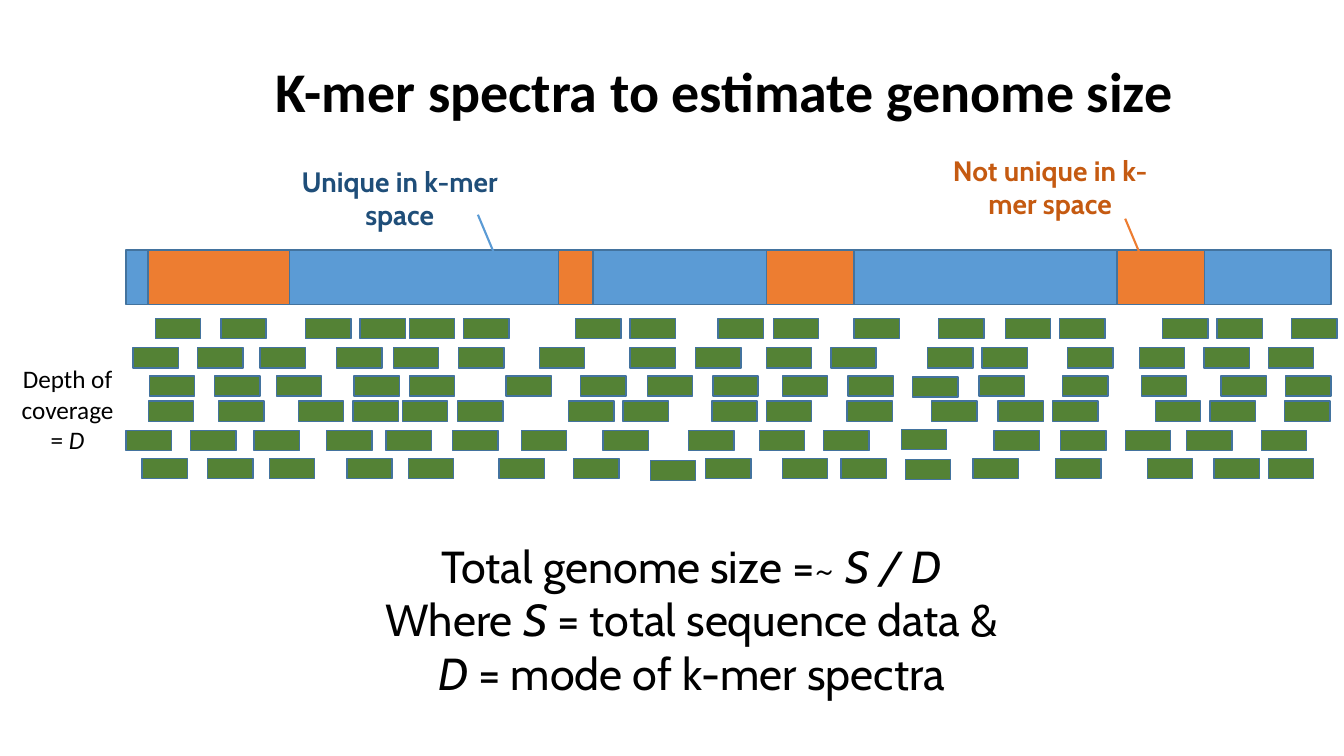
from lxml import etree
from pptx import Presentation
from pptx.dml.color import RGBColor
from pptx.enum import shapes, text
from pptx.oxml.ns import qn
from pptx.util import Inches, Pt

BLUE, ORANGE, GREEN = "5B9BD5", "ED7D31", "548235"
OUTLINE, BLACK = "43739E", "000000"
GENOME_TOP, GENOME_HEIGHT = 2.48, 0.54
READ_WIDTH, READ_HEIGHT = 0.45, 0.2

# Left and width of each repeated region
REPEATS = [(1.47, 1.4), (5.54, 0.34), (7.6, 0.87), (11.08, 0.87)]

# Top of each row of reads, with the left edges of its reads
READ_ROWS = {
    3.16: [1.54, 2.19, 3.03, 3.57, 4.06, 4.6, 5.71, 6.25, 7.12, 7.67,
           8.47, 9.31, 9.97, 10.51, 11.53, 12.07, 12.81],
    3.45: [1.32, 1.96, 2.58, 3.34, 3.9, 4.55, 5.35, 6.25, 6.9, 7.6,
           8.24, 9.2, 9.74, 10.59, 11.3, 11.94, 12.58],
    3.73: [1.48, 2.13, 2.74, 3.51, 4.06, 5.02, 5.76, 6.42, 7.07, 7.76,
           8.41, 9.05, 9.71, 10.54, 11.32, 12.11, 12.75],
    3.98: [1.47, 2.17, 2.96, 3.5, 3.99, 4.54, 5.64, 6.18, 7.06, 7.6,
           8.4, 9.24, 9.9, 10.44, 11.46, 12, 12.74],
    4.27: [1.25, 1.89, 2.52, 3.24, 3.83, 4.49, 5.17, 5.98, 6.83, 7.53,
           8.17, 8.94, 9.86, 10.52, 11.16, 11.77, 12.51],
    4.55: [1.41, 2.06, 2.67, 3.44, 4.05, 4.95, 5.69, 6.45, 7, 7.76,
           8.34, 8.98, 9.65, 10.47, 11.38, 12.04, 12.58],
}
# Reads that sit slightly off their row: (row top, left) -> shift down
READ_SHIFTS = {(3.73, 9.05): 0.01, (4.27, 8.94): -0.01,
               (4.55, 6.45): 0.02, (4.55, 8.98): 0.01}


def color(hex_string):
    return RGBColor.from_string(hex_string)


def add_block(slide, left, top, width, height, fill):
    block = slide.shapes.add_shape(
        shapes.MSO_SHAPE.RECTANGLE,
        Inches(left), Inches(top), Inches(width), Inches(height))
    block.shadow.inherit = False
    block.fill.solid()
    block.fill.fore_color.rgb = color(fill)
    block.line.color.rgb = color(OUTLINE)
    block.line.width = Pt(1)


def add_pointer(slide, left, top, line_color):
    """Draw the slanted line that leads from a label into the genome bar."""
    pointer = slide.shapes.add_connector(
        shapes.MSO_CONNECTOR.STRAIGHT, Inches(left), Inches(top),
        Inches(left + 0.26), Inches(top + 0.62))
    pointer.line.color.rgb = color(line_color)
    pointer.line.width = Pt(1.5)
    etree.SubElement(pointer._element.spPr, qn("a:effectLst"))


def add_text(slide, box, paragraphs, size, font, font_color=BLACK, bold=False):
    """Add centred text; each paragraph is a list of (words, italic) runs."""
    textbox = slide.shapes.add_textbox(*(Inches(length) for length in box))
    frame = textbox.text_frame
    frame.word_wrap = True
    frame.auto_size = text.MSO_AUTO_SIZE.SHAPE_TO_FIT_TEXT
    for index, runs in enumerate(paragraphs):
        paragraph = frame.add_paragraph() if index else frame.paragraphs[0]
        paragraph.alignment = text.PP_ALIGN.CENTER
        for words, italic in runs:
            run = paragraph.add_run()
            run.text = words
            run.font.name = font
            run.font.size = Pt(size)
            run.font.bold = bold
            run.font.italic = italic
            run.font.color.rgb = color(font_color)


def add_genome(slide):
    add_block(slide, 1.25, GENOME_TOP, 11.95, GENOME_HEIGHT, BLUE)
    for left, width in REPEATS:
        add_block(slide, left, GENOME_TOP, width, GENOME_HEIGHT, ORANGE)


def add_reads(slide):
    for top, lefts in READ_ROWS.items():
        for left in lefts:
            shift = READ_SHIFTS.get((top, left), 0)
            add_block(slide, left, top + shift, READ_WIDTH, READ_HEIGHT, GREEN)


def main():
    presentation = Presentation()
    presentation.slide_width = Inches(13.33)
    presentation.slide_height = Inches(7.5)
    slide = presentation.slides.add_slide(presentation.slide_layouts[6])

    add_text(slide, (2.49, 0.51, 9.38, 0.77),
             [[("K-mer spectra to estimate genome size", False)]],
             40, "Calibri", bold=True)
    add_genome(slide)
    add_text(slide, (2.75, 1.58, 2.43, 0.77),
             [[("Unique in k-mer space", False)]], 20, "Cabin", "1F4E79", True)
    add_text(slide, (9.34, 1.47, 2.15, 0.77),
             [[("Not unique in k-mer space", False)]], 20, "Cabin", "C55A11", True)
    add_pointer(slide, 4.74, 2.13, BLUE)
    add_pointer(slide, 11.16, 2.17, ORANGE)
    add_text(slide, (0.1, 3.56, 1.14, 1.01),
             [[("Depth of coverage = ", False), ("D", True)]], 18, "Calibri")
    add_reads(slide)
    add_text(slide, (2.17, 5.29, 9.38, 1.72),
             [[("Total genome size =~ ", False), ("S / D", True)],
              [("Where ", False), ("S ", True),
               ("= total sequence data &", False)],
              [("D ", True), ("= mode of k-mer spectra", False)]],
             32, "Cabin")

    presentation.save("out.pptx")


if __name__ == "__main__":
    main()
